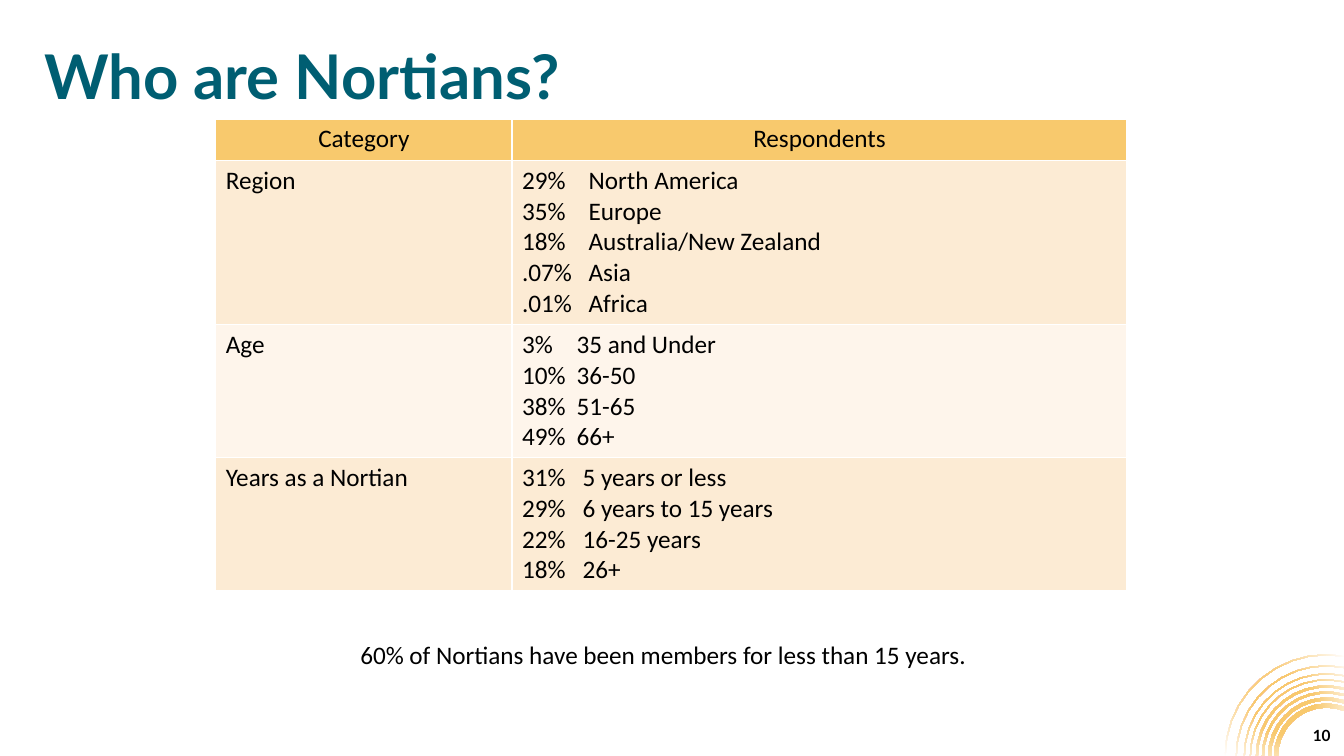
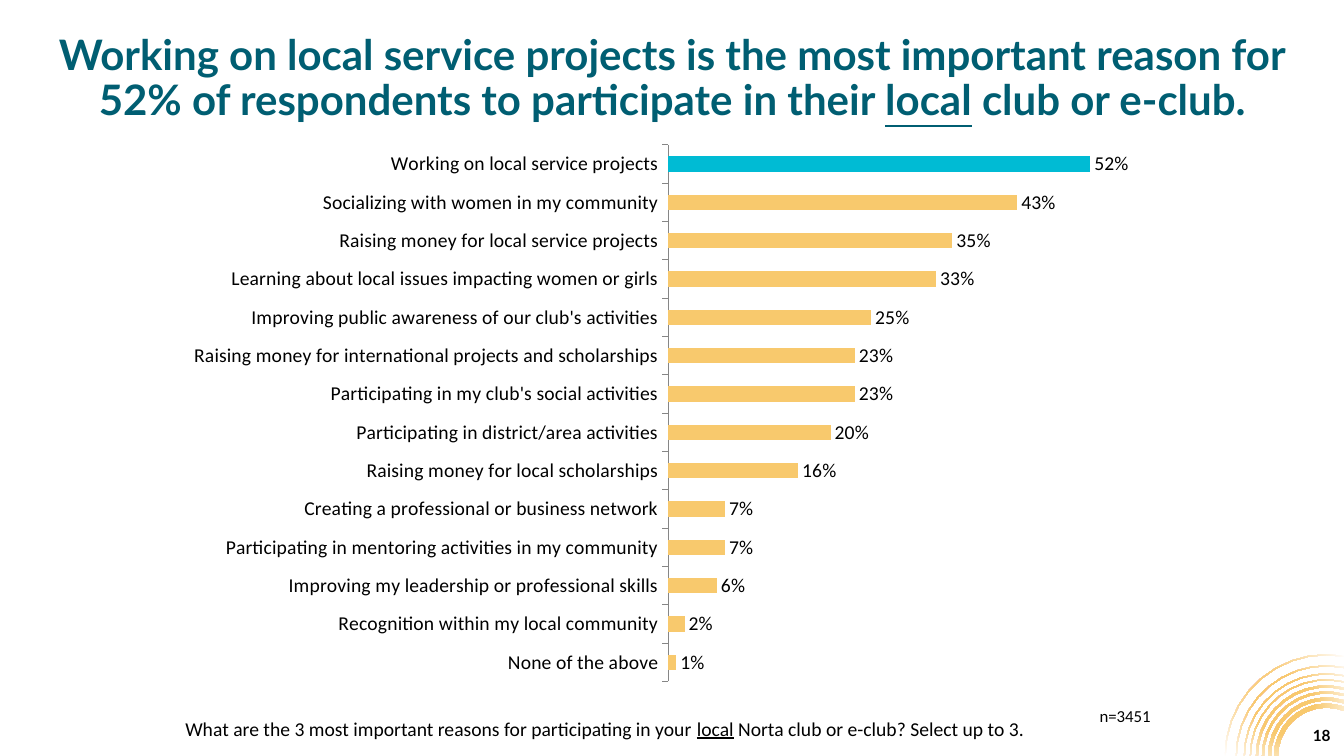
from dataclasses import dataclass
from math import acos, cos, pi, sin

from pptx import Presentation
from pptx.chart.data import CategoryChartData
from pptx.dml.color import RGBColor
from pptx.enum.chart import XL_CHART_TYPE, XL_LABEL_POSITION, XL_TICK_LABEL_POSITION, XL_TICK_MARK
from pptx.enum.text import MSO_ANCHOR, PP_ALIGN
from pptx.oxml import parse_xml
from pptx.oxml.ns import nsdecls
from pptx.util import Inches, Pt

BAR_CLUSTERED = XL_CHART_TYPE.BAR_CLUSTERED
OUTSIDE_END = XL_LABEL_POSITION.OUTSIDE_END
LABELS_LOW = XL_TICK_LABEL_POSITION.LOW
TICK_OUTSIDE, TICK_NONE = XL_TICK_MARK.OUTSIDE, XL_TICK_MARK.NONE
TOP, MIDDLE = MSO_ANCHOR.TOP, MSO_ANCHOR.MIDDLE
LEFT, CENTER, RIGHT = PP_ALIGN.LEFT, PP_ALIGN.CENTER, PP_ALIGN.RIGHT


@dataclass(frozen=True)
class Theme:
    heading_font: str = "Lato"
    body_font: str = "Calibri"
    teal: str = "005E72"
    cyan: str = "00BBD4"
    gold: str = "F8C96D"
    band_dark: str = "FCEBD4"
    band_light: str = "FEF5EB"
    axis: str = "868686"
    black: str = "000000"
    white: str = "FFFFFF"
    title_size: int = 44
    long_title_size: int = 30
    body_size: int = 18
    label_size: int = 14
    note_size: int = 12
    number_size: int = 11


THEME = Theme()
SLIDE_WIDTH, SLIDE_HEIGHT = 40 / 3, 7.5
RING_CENTER_X = 13.16
RING_RADII = [(0.52, 0.48), (0.58, 0.55), (0.64, 0.62), (0.7, 0.68),
              (0.76, 0.75), (0.82, 0.81), (0.9, 0.89), (1.01, 1.0)]
RING_STEPS = 10

RESPONDENTS = [
    ("Region", 1.63, 0.66, [("29%", "North America"), ("35%", "Europe"),
                            ("18%", "Australia/New Zealand"), (".07%", "Asia"), (".01%", "Africa")]),
    ("Age", 1.32, 0.54, [("3%", "35 and Under"), ("10%", "36-50"), ("38%", "51-65"), ("49%", "66+")]),
    ("Years as a Nortian", 1.32, 0.6, [("31%", "5 years or less"), ("29%", "6 years to 15 years"),
                                       ("22%", "16-25 years"), ("18%", "26+")]),
]

REASONS = [
    ("None of the above", 0.01),
    ("Recognition within my local community", 0.02),
    ("Improving my leadership or professional skills", 0.06),
    ("Participating in mentoring activities in my community", 0.07),
    ("Creating a professional or business network", 0.07),
    ("Raising money for local scholarships", 0.16),
    ("Participating in district/area activities", 0.2),
    ("Participating in my club's social activities", 0.23),
    ("Raising money for international projects and scholarships", 0.23),
    ("Improving public awareness of our club's activities", 0.25),
    ("Learning about local issues impacting women or girls", 0.33),
    ("Raising money for local service projects", 0.35),
    ("Socializing with women in my community", 0.43),
    ("Working on local service projects", 0.52),
]


def set_attributes(target, values):
    for name, value in values.items():
        setattr(target, name, value)


def set_font(font, size, color=THEME.black, name=THEME.body_font, bold=False):
    set_attributes(font, {"size": Pt(size), "name": name, "bold": bold})
    font.color.rgb = RGBColor.from_string(color)


def set_solid_fill(fill, color):
    fill.solid()
    fill.fore_color.rgb = RGBColor.from_string(color)


def add_text(slide, box, parts, alignment=LEFT, anchor=TOP, line_spacing=None, **font_format):
    shape = slide.shapes.add_textbox(*map(Inches, box))
    set_attributes(shape.text_frame, {"word_wrap": True, "vertical_anchor": anchor})
    paragraph = shape.text_frame.paragraphs[0]
    set_attributes(paragraph, {"alignment": alignment, "line_spacing": line_spacing})
    for index, part in enumerate(parts):
        run = paragraph.add_run()
        run.text = part
        set_font(run.font, **font_format)
        run.font.underline = index % 2 == 1


def ring_outline(outer, inner):
    points = []
    for radius, backwards in ((outer, False), (inner, True)):
        end = acos((SLIDE_WIDTH - RING_CENTER_X) / radius)
        angles = [pi + (end - pi) * step / RING_STEPS for step in range(RING_STEPS + 1)]
        if backwards:
            angles.reverse()
        points += [(Inches(RING_CENTER_X + radius * cos(angle)),
                    Inches(SLIDE_HEIGHT - radius * sin(angle))) for angle in angles]
    return points


def add_rings(slide):
    outlines = [ring_outline(outer, inner) for outer, inner in RING_RADII]
    builder = slide.shapes.build_freeform(*outlines[0][0])
    for index, outline in enumerate(outlines):
        if index:
            builder.move_to(*outline[0])
        builder.add_line_segments(outline[1:], close=True)
    shape = builder.convert_to_shape()
    shape.shadow.inherit = False
    shape.line.fill.background()
    shape.fill.background()
    properties = shape.element.spPr
    gradient = parse_xml(
        f'<a:gradFill {nsdecls("a")}><a:gsLst>'
        f'<a:gs pos="37000"><a:srgbClr val="{THEME.gold}"/></a:gs>'
        f'<a:gs pos="100000"><a:srgbClr val="{THEME.white}"/></a:gs></a:gsLst>'
        '<a:path path="circle"><a:fillToRect l="50000" t="50000" r="50000" b="50000"/></a:path>'
        '</a:gradFill>')
    properties.replace(properties.xpath("./a:noFill")[0], gradient)


def add_content_slide(presentation, number, title, title_size, alignment=LEFT):
    slide = presentation.slides.add_slide(presentation.slide_layouts[6])
    add_rings(slide)
    add_text(slide, (10.3, 7.18, 3, 0.24), [number], RIGHT, MIDDLE,
             size=THEME.number_size, name=THEME.heading_font, bold=True)
    add_text(slide, (0.34, 0.4, 12.66, 0.77), title, alignment, MIDDLE, 0.9,
             size=title_size, color=THEME.teal, name=THEME.heading_font, bold=True)
    return slide


def fill_cell(cell, lines, color, alignment=LEFT, tab=None):
    set_solid_fill(cell.fill, color)
    frame = cell.text_frame
    for index, line in enumerate(lines):
        paragraph = frame.add_paragraph() if index else frame.paragraphs[0]
        paragraph.alignment = alignment
        if tab:
            paragraph._p.get_or_add_pPr().append(parse_xml(
                f'<a:tabLst {nsdecls("a")}><a:tab pos="{Inches(tab)}" algn="l"/></a:tabLst>'))
        run = paragraph.add_run()
        run.text = line
        set_font(run.font, THEME.body_size)


def add_respondent_table(slide):
    heights = [0.41] + [height for _, height, _, _ in RESPONDENTS]
    widths = [2.94, 6.1]
    box = (2.14, 1.18, sum(widths), sum(heights))
    table = slide.shapes.add_table(len(heights), len(widths), *map(Inches, box)).table
    for column, width in zip(table.columns, widths):
        column.width = Inches(width)
    for row, height in zip(table.rows, heights):
        row.height = Inches(height)
    for index, heading in enumerate(["Category", "Respondents"]):
        fill_cell(table.cell(0, index), [heading], THEME.gold, CENTER)
    for row, (category, _, tab, shares) in enumerate(RESPONDENTS, 1):
        color = THEME.band_dark if row % 2 else THEME.band_light
        fill_cell(table.cell(row, 0), [category], color)
        fill_cell(table.cell(row, 1), ["\t".join(share) for share in shares], color, tab=tab)


def set_plot_layout(chart, **fractions):
    values = "".join(f'<c:{key} val="{value}"/>' for key, value in fractions.items())
    plot_area = chart.element.xpath("c:chart/c:plotArea")[0]
    for layout in plot_area.xpath("c:layout"):
        plot_area.remove(layout)
    plot_area.insert(0, parse_xml(
        f'<c:layout {nsdecls("c")}><c:manualLayout><c:layoutTarget val="inner"/>'
        f'<c:xMode val="edge"/><c:yMode val="edge"/>{values}</c:manualLayout></c:layout>'))


def add_reason_chart(slide):
    data = CategoryChartData(number_format="0%")
    data.categories = [reason for reason, _ in REASONS]
    shares = [share for _, share in REASONS]
    data.add_series("Series 1", shares)
    box = map(Inches, (1.78, 1.16, 9.78, 5.63))
    chart = slide.shapes.add_chart(BAR_CLUSTERED, *box, data).chart
    set_attributes(chart, {"has_legend": False, "has_title": False})
    set_font(chart.font, THEME.body_size)
    set_plot_layout(chart, x=0.496, y=0.049, w=0.494, h=0.946)

    set_attributes(chart.value_axis, {"visible": False, "has_major_gridlines": False,
                                      "minimum_scale": 0, "maximum_scale": 0.6})
    axis = chart.category_axis
    set_attributes(axis, {"major_tick_mark": TICK_OUTSIDE, "minor_tick_mark": TICK_NONE,
                          "tick_label_position": LABELS_LOW, "has_major_gridlines": False})
    axis.format.line.color.rgb = RGBColor.from_string(THEME.axis)
    axis.format.line.width = Pt(0.75)
    set_font(axis.tick_labels.font, THEME.label_size)

    plot = chart.plots[0]
    set_attributes(plot, {"gap_width": 150, "vary_by_categories": False, "has_data_labels": True})
    set_attributes(plot.data_labels, {"show_value": True, "position": OUTSIDE_END,
                                      "number_format": "0%", "number_format_is_linked": False})
    set_font(plot.data_labels.font, THEME.label_size)
    series = plot.series[0]
    set_solid_fill(series.format.fill, THEME.gold)
    set_solid_fill(series.points[shares.index(max(shares))].format.fill, THEME.cyan)


def build_member_slide(presentation):
    slide = add_content_slide(presentation, "10", ["Who are Nortians?"], THEME.title_size)
    add_respondent_table(slide)
    add_text(slide, (0.59, 6.29, 11.98, 0.4),
             ["60% of Nortians have been members for less than 15 years."], CENTER, size=THEME.body_size)


def build_reason_slide(presentation):
    title = ["Working on local service projects is the most important reason for "
             "52% of respondents to participate in their ", "local", " club or e-club."]
    question = ["What are the 3 most important reasons for participating in your ",
                "local", " Norta club or e-club? Select up to 3."]
    slide = add_content_slide(presentation, "18", title, THEME.long_title_size, CENTER)
    add_reason_chart(slide)
    add_text(slide, (10.81, 6.95, 1.48, 0.3), ["n=3451"], size=THEME.note_size)
    add_text(slide, (1.74, 7.06, 9.14, 0.34), question, size=THEME.label_size)


def main():
    presentation = Presentation()
    set_attributes(presentation, {"slide_width": Inches(SLIDE_WIDTH), "slide_height": Inches(SLIDE_HEIGHT)})
    build_member_slide(presentation)
    build_reason_slide(presentation)
    presentation.save("out.pptx")


if __name__ == "__main__":
    main()
